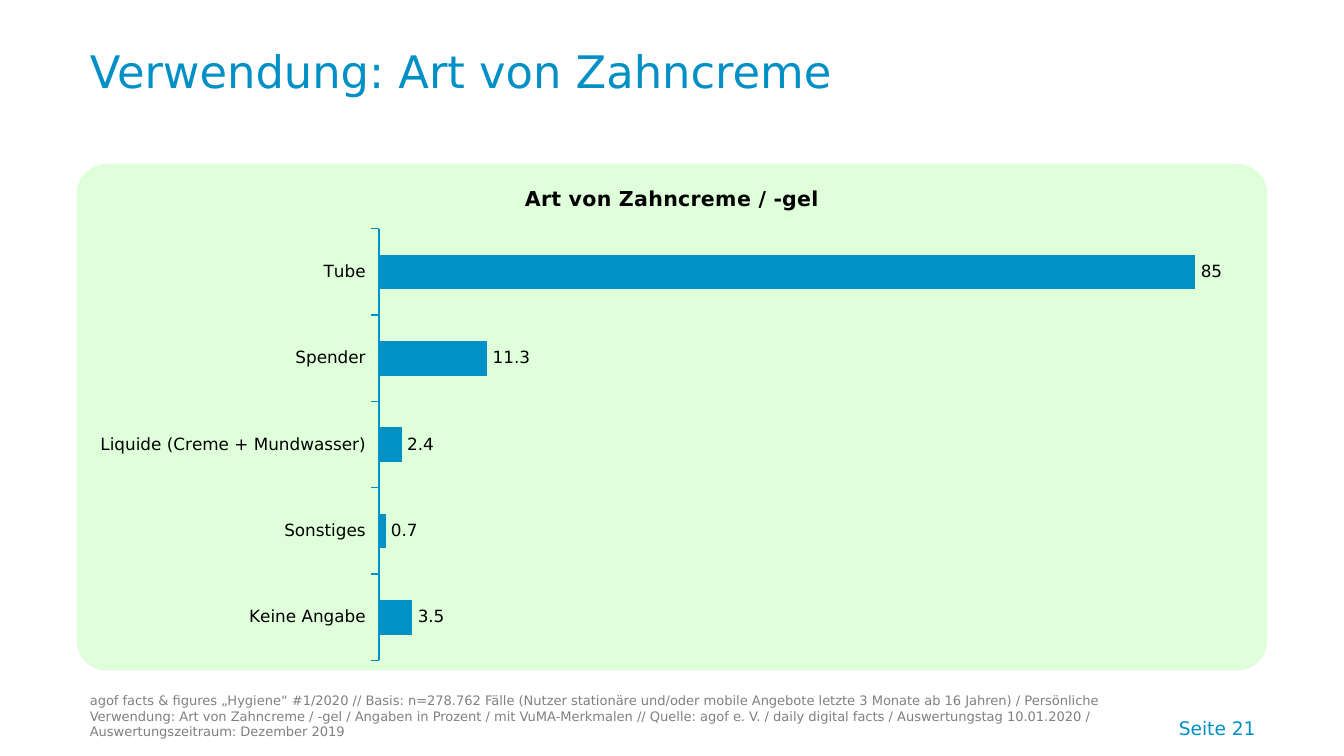
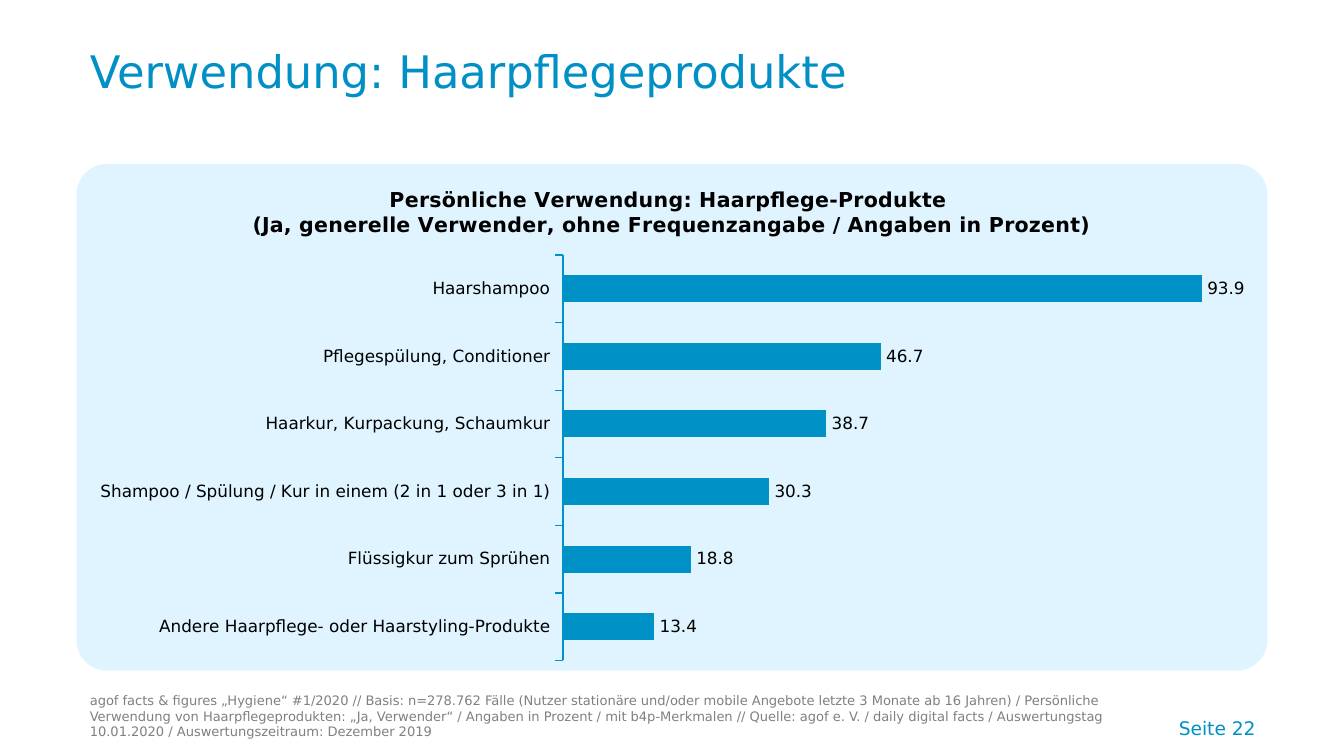
from pptx import Presentation
from pptx.chart.data import CategoryChartData
from pptx.dml.color import RGBColor
from pptx.enum.chart import XL_CHART_TYPE, XL_LABEL_POSITION, XL_TICK_MARK
from pptx.enum.shapes import MSO_SHAPE
from pptx.enum.text import MSO_ANCHOR, PP_ALIGN
from pptx.oxml import parse_xml
from pptx.oxml.ns import nsdecls, qn
from pptx.util import Inches, Pt

FONT = "DejaVu Sans"
TITLE_BLUE, BAR_BLUE, GREY, BLACK = "0090C5", "0092C6", "808080", "000000"
PANEL = [Inches(length) for length in (0.57, 1.22, 8.86, 3.77)]

SOURCE_START = (
    "agof facts & figures „Hygiene“ #1/2020 // Basis: n=278.762 Fälle (Nutzer stationäre "
    "und/oder mobile Angebote letzte 3 Monate ab 16 Jahren) / Persönliche Verwendung"
)
SOURCE_END = (
    "-Merkmalen // Quelle: agof e. V. / daily digital facts / Auswertungstag 10.01.2020 / "
    "Auswertungszeitraum: Dezember 2019"
)

TOPICS = [
    {
        "title": "Verwendung: Art von Zahncreme",
        "panel": "DEFFD9",
        "chart_title": ["Art von Zahncreme / -gel"],
        "values": {
            "Tube": 85,
            "Spender": 11.3,
            "Liquide (Creme + Mundwasser)": 2.4,
            "Sonstiges": 0.7,
            "Keine Angabe": 3.5,
        },
        "axis_maximum": 90,
        "major_unit": 6,
        "source": ": Art von Zahncreme / -gel / Angaben in Prozent / mit VuMA",
    },
    {
        "title": "Verwendung: Haarpflegeprodukte",
        "panel": "DFF4FF",
        "chart_title": [
            "Persönliche Verwendung: Haarpflege-Produkte ",
            "(Ja, generelle Verwender, ohne Frequenzangabe / Angaben in Prozent)",
        ],
        "values": {
            "Haarshampoo": 93.9,
            "Pflegespülung, Conditioner": 46.7,
            "Haarkur, Kurpackung, Schaumkur": 38.7,
            "Shampoo / Spülung / Kur in einem (2 in 1 oder 3 in 1)": 30.3,
            "Flüssigkur zum Sprühen": 18.8,
            "Andere Haarpflege- oder Haarstyling-Produkte": 13.4,
        },
        "axis_maximum": 100,
        "major_unit": 5,
        "source": " von Haarpflegeprodukten: „Ja, Verwender“ / Angaben in Prozent / mit b4p",
    },
]


def style_font(font, size, color, name=FONT):
    font.name = name
    font.size = Pt(size)
    font.color.rgb = RGBColor.from_string(color)


def add_text(page, place, text, size, color, anchor=MSO_ANCHOR.BOTTOM):
    """Add a wrapping one-paragraph text box and return its paragraph."""
    box = page.shapes.add_textbox(*[Inches(length) for length in place])
    box.text_frame.word_wrap = True
    box.text_frame.vertical_anchor = anchor
    para = box.text_frame.paragraphs[0]
    span = para.add_run()
    span.text = text
    style_font(span.font, size, color)
    return para


deck = Presentation()
deck.slide_width = Inches(10)
deck.slide_height = deck.slide_width * 9 // 16

for number, topic in enumerate(TOPICS, start=21):
    page = deck.slides.add_slide(deck.slide_layouts[6])

    # Page number, panel, title and source line
    para = add_text(page, (7.99, 5.17, 1.45, 0.38), f"Seite {number}", 10, TITLE_BLUE)
    para.alignment = PP_ALIGN.RIGHT

    panel = page.shapes.add_shape(MSO_SHAPE.ROUNDED_RECTANGLE, *PANEL)
    panel.adjustments[0] = 0.06
    panel.shadow.inherit = False
    panel.fill.solid()
    panel.fill.fore_color.rgb = RGBColor.from_string(topic["panel"])
    panel.line.fill.background()

    para = add_text(page, (0.57, 0.28, 7.42, 0.56), topic["title"], 24, TITLE_BLUE,
                    MSO_ANCHOR.MIDDLE)
    para.line_spacing = 0.8
    add_text(page, (0.57, 5.16, 7.91, 0.39), SOURCE_START + topic["source"] + SOURCE_END,
             7, GREY)

    # Bar chart
    data = CategoryChartData()
    data.categories = list(topic["values"])
    data.add_series("Series 1", list(topic["values"].values()))
    chart = page.shapes.add_chart(XL_CHART_TYPE.BAR_CLUSTERED, *PANEL, data).chart
    chart.has_legend = False
    style_font(chart.font, 10, BLACK, "Roboto")
    chart.element.find(qn("c:chart")).addnext(parse_xml(
        f'<c:spPr {nsdecls("c", "a")}><a:noFill/><a:ln><a:noFill/></a:ln></c:spPr>'))

    chart.has_title = True
    chart.chart_title.include_in_layout = False
    frame = chart.chart_title.text_frame
    for index, line in enumerate(topic["chart_title"]):
        para = frame.add_paragraph() if index else frame.paragraphs[0]
        span = para.add_run()
        span.text = line
        style_font(span.font, 11, BLACK)
        span.font.bold = True

    category_axis = chart.category_axis
    category_axis.reverse_order = True
    category_axis.has_major_gridlines = False
    category_axis.major_tick_mark = XL_TICK_MARK.OUTSIDE
    category_axis.minor_tick_mark = XL_TICK_MARK.NONE
    category_axis.format.line.color.rgb = RGBColor.from_string(BAR_BLUE)
    category_axis.format.line.width = Pt(0.75)
    style_font(category_axis.tick_labels.font, 9, BLACK)

    value_axis = chart.value_axis
    value_axis.visible = False
    value_axis.has_major_gridlines = False
    value_axis.minimum_scale = 0
    value_axis.maximum_scale = topic["axis_maximum"]
    value_axis.major_unit = topic["major_unit"]

    plot = chart.plots[0]
    plot.vary_by_categories = False
    plot.gap_width = 150
    plot.overlap = -30
    bars = plot.series[0]
    bars.format.fill.solid()
    bars.format.fill.fore_color.rgb = RGBColor.from_string(BAR_BLUE)
    labels = bars.data_labels
    labels.show_value = True
    labels.position = XL_LABEL_POSITION.OUTSIDE_END
    style_font(labels.font, 9, BLACK)

deck.save("out.pptx")
